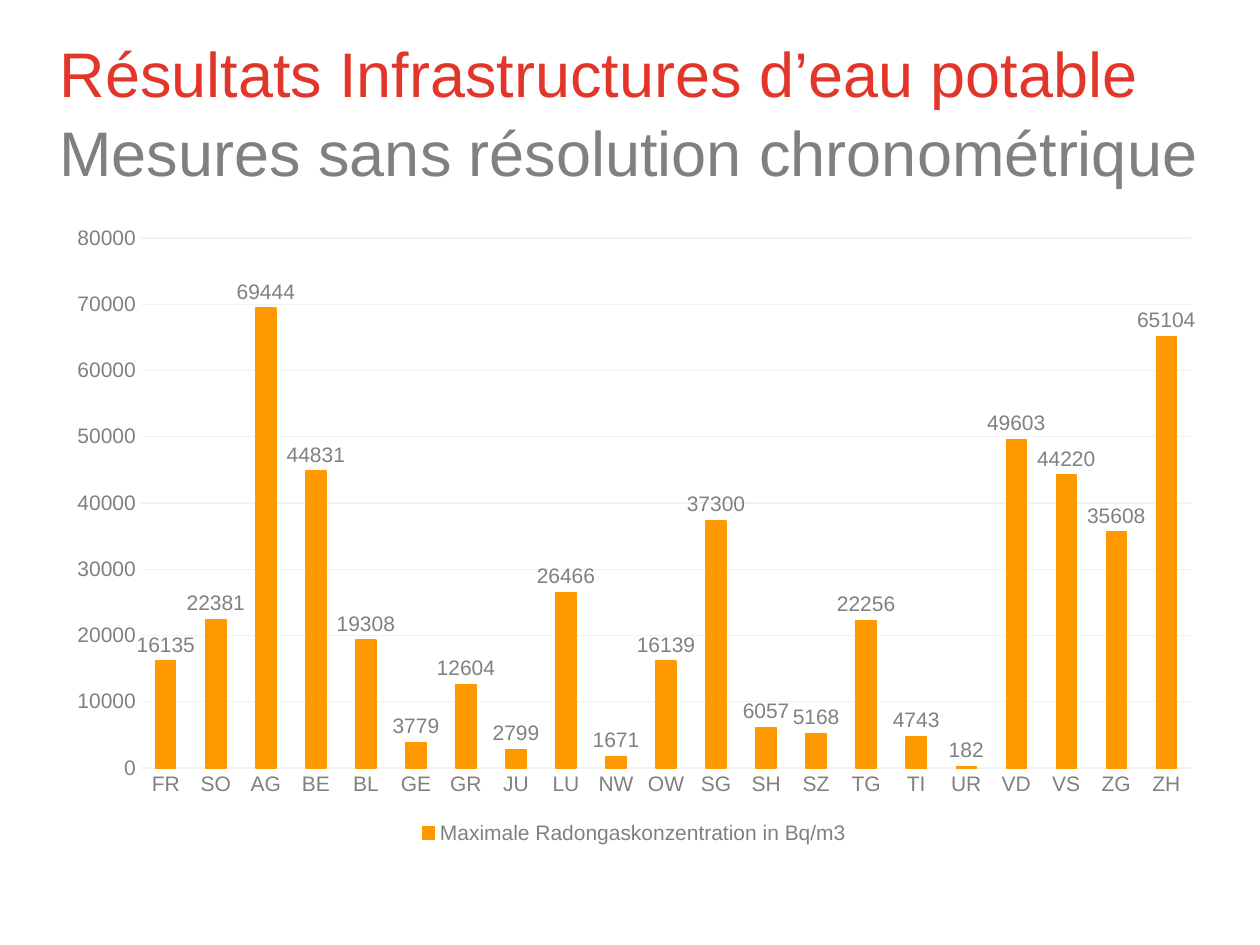
import pptx
import pptx.util
import pptx.chart.data
import pptx.dml.color
import pptx.enum.chart
import pptx.enum.text

Pt = pptx.util.Pt

RED = "E3362B"
GREY = "808080"
PALE_GREY = "F2F2F2"
ORANGE = "FF9900"

RADON_BY_CANTON = {
    "FR": 16135, "SO": 22381, "AG": 69444, "BE": 44831, "BL": 19308,
    "GE": 3779, "GR": 12604, "JU": 2799, "LU": 26466, "NW": 1671,
    "OW": 16139, "SG": 37300, "SH": 6057, "SZ": 5168, "TG": 22256,
    "TI": 4743, "UR": 182, "VD": 49603, "VS": 44220, "ZG": 35608,
    "ZH": 65104,
}


def color(hex_code):
    return pptx.dml.color.RGBColor.from_string(hex_code)


class RadonSlide:
    font_name = "Arial"
    title_size = 36
    label_size = 12

    def __init__(self, presentation):
        self.slide = presentation.slides.add_slide(presentation.slide_layouts[5])

    def style(self, font, size, hex_code):
        font.name = self.font_name
        font.size = Pt(size)
        font.bold = False
        font.color.rgb = color(hex_code)

    def title(self, left, top, width, height, lines):
        """Fill the title placeholder with (text, colour) lines."""
        heading = self.slide.shapes.title
        heading.left, heading.top = Pt(left), Pt(top)
        heading.width, heading.height = Pt(width), Pt(height)
        frame = heading.text_frame
        frame.word_wrap = True
        frame.auto_size = pptx.enum.text.MSO_AUTO_SIZE.NONE
        frame.vertical_anchor = pptx.enum.text.MSO_ANCHOR.TOP
        frame.margin_left, frame.margin_top = Pt(3), Pt(6)
        frame.margin_right = frame.margin_bottom = 0
        paragraph = frame.paragraphs[0]
        paragraph.alignment = pptx.enum.text.PP_ALIGN.LEFT
        paragraph.line_spacing = 1.05
        for index, (text, hex_code) in enumerate(lines):
            if index:
                paragraph.add_line_break()
            run = paragraph.add_run()
            run.text = text
            self.style(run.font, self.title_size, hex_code)

    def axis(self, axis):
        axis.major_tick_mark = pptx.enum.chart.XL_TICK_MARK.NONE
        axis.minor_tick_mark = pptx.enum.chart.XL_TICK_MARK.NONE
        axis.format.line.fill.background()
        self.style(axis.tick_labels.font, self.label_size, GREY)

    def column_chart(self, left, top, width, height, name, values):
        data = pptx.chart.data.CategoryChartData(number_format="0")
        data.categories = list(values)
        data.add_series(name, list(values.values()))
        chart = self.slide.shapes.add_chart(
            pptx.enum.chart.XL_CHART_TYPE.COLUMN_CLUSTERED,
            Pt(left), Pt(top), Pt(width), Pt(height), data).chart
        chart.has_title = False
        self.style(chart.font, 10, "000000")

        self.axis(chart.category_axis)
        self.axis(chart.value_axis)
        scale = chart.value_axis
        scale.minimum_scale, scale.maximum_scale = 0, 80000
        scale.major_unit = 10000
        scale.tick_labels.number_format = "0"
        scale.tick_labels.number_format_is_linked = False
        gridline = scale.major_gridlines.format.line
        gridline.color.rgb = color(PALE_GREY)
        gridline.width = Pt(0.75)

        chart.has_legend = True
        chart.legend.position = pptx.enum.chart.XL_LEGEND_POSITION.BOTTOM
        chart.legend.include_in_layout = False
        self.style(chart.legend.font, self.label_size, GREY)

        plot = chart.plots[0]
        plot.gap_width = 150
        plot.vary_by_categories = False
        columns = plot.series[0]
        columns.format.fill.solid()
        columns.format.fill.fore_color.rgb = color(ORANGE)
        columns.format.line.color.rgb = color(ORANGE)
        columns.format.line.width = Pt(0.75)
        labels = columns.data_labels
        labels.show_value = True
        labels.number_format = "0"
        labels.number_format_is_linked = False
        labels.position = pptx.enum.chart.XL_LABEL_POSITION.OUTSIDE_END
        self.style(labels.font, self.label_size, GREY)


def main():
    presentation = pptx.Presentation()
    presentation.slide_width = Pt(720)
    presentation.slide_height = Pt(540)
    results = RadonSlide(presentation)
    left, width = 31, 663
    results.title(left, 11.5, width, 100, [
        ("Résultats Infrastructures d’eau potable", RED),
        ("Mesures sans résolution chronométrique", GREY),
    ])
    results.column_chart(left, 122.4, width, 363,
                         "Maximale Radongaskonzentration in Bq/m3", RADON_BY_CANTON)
    presentation.save("out.pptx")


if __name__ == "__main__":
    main()
